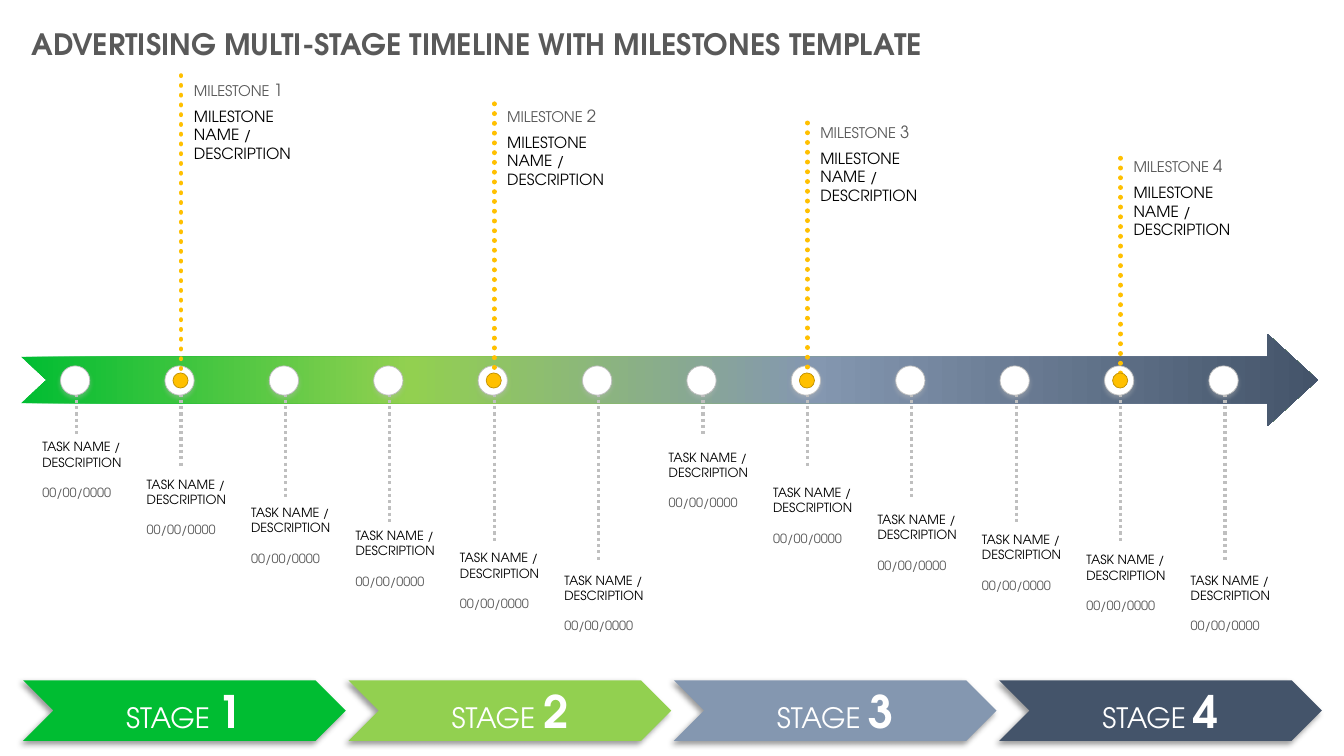
from dataclasses import dataclass

from pptx import Presentation
from pptx.dml.color import RGBColor
from pptx.enum.dml import MSO_LINE
from pptx.enum.shapes import MSO_CONNECTOR, MSO_SHAPE
from pptx.enum.text import MSO_ANCHOR, MSO_AUTO_SIZE, PP_ALIGN
from pptx.oxml import parse_xml
from pptx.oxml.ns import nsdecls, qn
from pptx.util import Inches, Pt


@dataclass(frozen=True)
class Theme:
    font: str = "TeX Gyre Adventor"
    stages: tuple = ("00BD32", "92D050", "8497B0", "44546A")
    white: str = "FFFFFF"
    black: str = "000000"
    gray: str = "595959"
    silver: str = "BFBFBF"
    gold: str = "FFC000"
    bronze: str = "BF9000"
    title: float = 21
    stage: float = 20
    stage_number: float = 32
    task: float = 9
    label: float = 10.5
    label_number: float = 12
    description: float = 11


T = Theme()


def style(r, size, color, bold=False):
    r.font.name = T.font
    r.font.size = Pt(size)
    r.font.bold = bold
    r.font.color.rgb = RGBColor.from_string(color)


def dotted_line(shapes, x, top, bottom, color, width, cap):
    line = shapes.add_connector(
        MSO_CONNECTOR.STRAIGHT, Inches(x), Inches(top), Inches(x), Inches(bottom))
    line.line.color.rgb = RGBColor.from_string(color)
    line.line.width = Pt(width)
    line.line.dash_style = MSO_LINE.ROUND_DOT
    spPr = line._element.spPr
    spPr.find(qn("a:ln")).set("cap", cap)
    spPr.append(parse_xml(f"<a:effectLst {nsdecls('a')}/>"))


prs = Presentation()
prs.slide_width, prs.slide_height = Inches(13.33), Inches(7.5)
s = prs.slides.add_slide(prs.slide_layouts[5])

title = s.shapes.title
title.left, title.top = Inches(0.21), Inches(0.21)
title.width, title.height = Inches(9.2), Inches(0.45)
tf = title.text_frame
tf.text = "ADVERTISING MULTI-STAGE TIMELINE WITH MILESTONES TEMPLATE"
tf.vertical_anchor = MSO_ANCHOR.TOP
tf.auto_size = MSO_AUTO_SIZE.SHAPE_TO_FIT_TEXT
tf.paragraphs[0].alignment = PP_ALIGN.LEFT
style(tf.paragraphs[0].runs[0], T.title, T.gray, True)

SHADOW = ('<a:outerShdw {ns} blurRad="{blur}" dist="{dist}" dir="{dir}" algn="t" rotWithShape="0">'
          '<a:srgbClr val="{color}"><a:alpha val="{alpha}"/></a:srgbClr></a:outerShdw>')

for i, color in enumerate(T.stages):
    sp = s.shapes.add_shape(
        MSO_SHAPE.CHEVRON, Inches(0.23 + 3.227 * i), Inches(6.75), Inches(3.2), Inches(0.6))
    sp.fill.solid()
    sp.fill.fore_color.rgb = RGBColor.from_string(color)
    sp.line.fill.background()
    sp.shadow.inherit = False
    sp._element.spPr.find(qn("a:effectLst")).append(parse_xml(SHADOW.format(
        ns=nsdecls("a"), blur=Pt(4), dist=Pt(3), dir=135 * 60000, color=T.black, alpha=40000)))
    sp.text_frame.vertical_anchor = MSO_ANCHOR.MIDDLE
    p = sp.text_frame.paragraphs[0]
    p.alignment = PP_ALIGN.CENTER
    p.text = "STAGE "
    style(p.runs[0], T.stage, T.white)
    r = p.add_run()
    r.text = str(i + 1)
    style(r, T.stage_number, T.white, True)

arrow = s.shapes.add_shape(
    MSO_SHAPE.NOTCHED_RIGHT_ARROW, Inches(0.21), Inches(3.31), Inches(12.86), Inches(0.92))
arrow.adjustments[0] = 0.5
arrow.adjustments[1] = 0.545
arrow.fill.gradient()
arrow.fill.gradient_angle = 0
stops = arrow._element.spPr.find(qn("a:gradFill")).find(qn("a:gsLst"))
for stop in list(stops):
    stops.remove(stop)
for pos, color in zip((0, 30, 61, 100), T.stages):
    stops.append(parse_xml(
        f'<a:gs {nsdecls("a")} pos="{pos * 1000}"><a:srgbClr val="{color}"/></a:gs>'))
arrow.line.fill.background()
arrow.shadow.inherit = False

task_tops = (4.31, 4.68, 4.96, 5.19, 5.41, 5.63, 4.41, 4.76, 5.03, 5.23, 5.43, 5.63)
line_ends = (4.33, 4.63, 4.93, 5.18, 5.38, 5.58) * 2
task_xs = [0.76 + 11.39 / 11 * i for i in range(12)]

for x, end in zip(task_xs, line_ends):
    dotted_line(s.shapes, x, 3.78, end, T.silver, 2.25, "flat")

for x in task_xs:
    sp = s.shapes.add_shape(
        MSO_SHAPE.OVAL, Inches(x - 0.16), Inches(3.63), Inches(0.29), Inches(0.29))
    sp.fill.solid()
    sp.fill.fore_color.rgb = RGBColor.from_string(T.white)
    sp.line.color.rgb = RGBColor.from_string(T.silver)
    sp.line.width = Pt(0.5)
    sp.shadow.inherit = False
    sp._element.spPr.find(qn("a:effectLst")).append(parse_xml(SHADOW.format(
        ns=nsdecls("a"), blur=Pt(3.1), dist=Pt(1.8), dir=90 * 60000, color=T.silver, alpha=35000)))

for x, top in zip(task_xs, task_tops):
    tf = s.shapes.add_textbox(
        Inches(x - 0.34), Inches(top), Inches(0.8), Inches(0.9)).text_frame
    tf.word_wrap = True
    tf.margin_left = tf.margin_right = 0
    tf.margin_top, tf.margin_bottom = Inches(0.05), Inches(0.01)
    tf.text = "TASK NAME / DESCRIPTION"
    style(tf.paragraphs[0].runs[0], T.task, T.black)
    p = tf.add_paragraph()
    p.text = "00/00/0000"
    p.space_before = Pt(11)
    style(p.runs[0], T.task, T.gray)

milestones = (
    (0.75, 0.74, 1.48, 2.5),
    (1.03, 1, 1.46, 2.44),
    (1.22, 1.16, 1.37, 2.05),
    (1.57, 1.5, 1.37, 1.73),
)
for i, (line_top, label_top, width, height) in enumerate(milestones):
    x = task_xs[1 + 3 * i]
    shapes = s.shapes.add_group_shape().shapes
    dotted_line(shapes, x, line_top, 3.77, T.gold, 3.5, "rnd")

    dot = shapes.add_shape(
        MSO_SHAPE.OVAL, Inches(x - 0.08), Inches(3.7), Inches(0.15), Inches(0.15))
    dot.fill.solid()
    dot.fill.fore_color.rgb = RGBColor.from_string(T.gold)
    dot.line.color.rgb = RGBColor.from_string(T.bronze)
    dot.line.width = Pt(0.5)
    dot.shadow.inherit = False

    tf = shapes.add_textbox(
        Inches(x + 0.03), Inches(label_top), Inches(1.17), Inches(0.26)).text_frame
    tf.word_wrap = True
    p = tf.paragraphs[0]
    p.text = "MILESTONE "
    style(p.runs[0], T.label, T.gray)
    r = p.add_run()
    r.text = str(i + 1)
    style(r, T.label_number, T.gray)

    tf = shapes.add_textbox(
        Inches(x + 0.03), Inches(label_top + 0.27), Inches(width), Inches(height)).text_frame
    tf.word_wrap = True
    tf.text = "MILESTONE NAME / DESCRIPTION"
    style(tf.paragraphs[0].runs[0], T.description, T.black)

prs.save("out.pptx")
